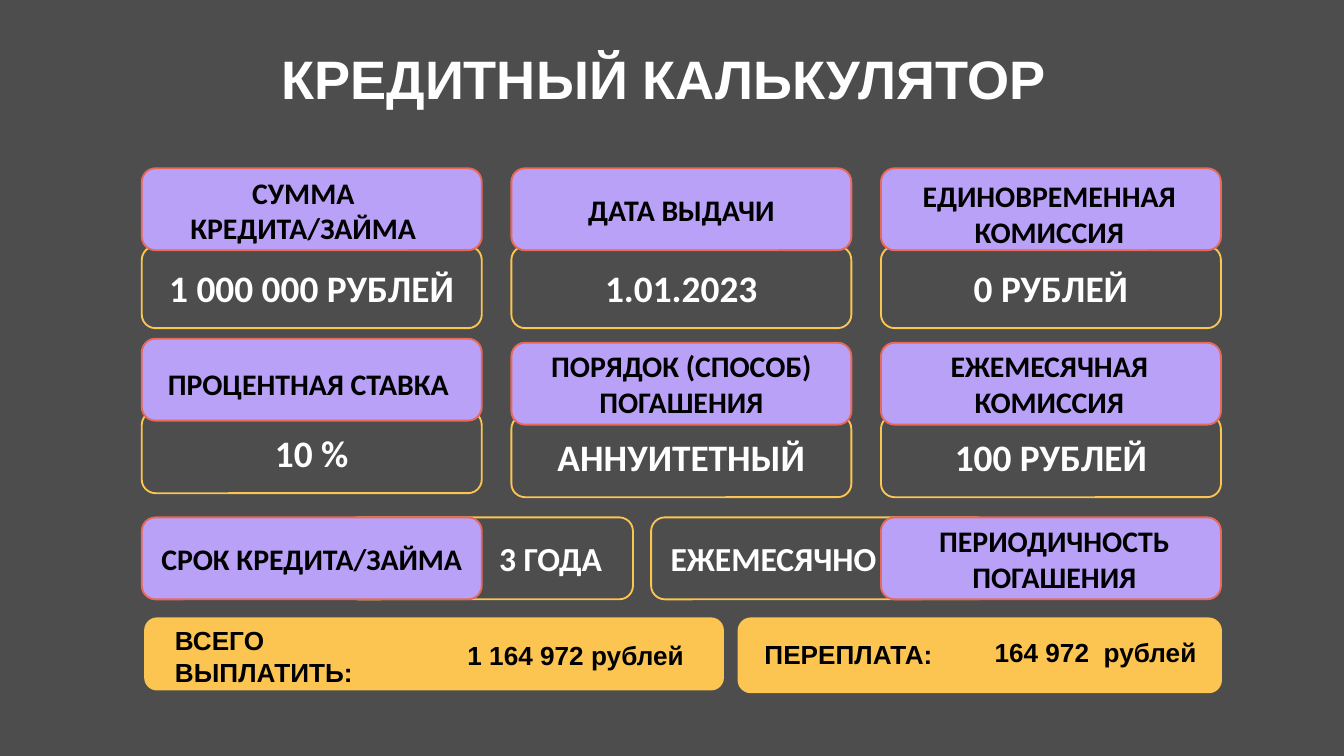
from pptx import Presentation
from pptx.dml.color import RGBColor
from pptx.enum.shapes import MSO_SHAPE
from pptx.enum.text import MSO_ANCHOR, PP_ALIGN
from pptx.util import Inches, Pt

WIDE = Inches(10)
HIGH = WIDE * 9 // 16
COLS = (10.55, 38.05, 65.55)
ROWS = (22.26, 45.33, 68.44)
CELL = (25.3, 10.84)
DROPS = (10.31, 9.6)
LIFT = 0.53
LINE = (0.01, 0.2, 0.98, 0.6)
FULL = (0.01, 0, 0.98, 1)
GOLD, LILAC, CORAL = "FCC450", "BAA1F8", "E86859"
WHITE, BLACK, GREY = "FFFFFF", "000000", "4D4D4D"

VALUES = [
    (0, 0, "1 000 000 РУБЛЕЙ"),
    (1, 0, "1.01.2023"),
    (2, 0, "0 РУБЛЕЙ"),
    (0, 1, "10 %"),
    (1, 1, "АННУИТЕТНЫЙ"),
    (2, 1, "100 РУБЛЕЙ"),
]
TERMS = [
    (25.6, 21.5, "3 ГОДА", (0.14, 0.2, 1.15, 0.6)),
    (48.45, 25.3, "ЕЖЕМЕСЯЧНО", (-0.13, 0.2, 0.98, 0.6)),
]
LABELS = [
    (0, 0, "СУММА КРЕДИТА/ЗАЙМА", (0.1, 0.01, 0.75, 1)),
    (1, 0, "ДАТА ВЫДАЧИ", (0.01, 0.24, 0.98, 0.54)),
    (2, 0, "ЕДИНОВРЕМЕННАЯ КОМИССИЯ", (0.09, 0.05, 0.81, 1)),
    (0, 1, "ПРОЦЕНТНАЯ СТАВКА", (0, 0.28, 0.98, 0.54)),
    (1, 1, "ПОРЯДОК (СПОСОБ) ПОГАШЕНИЯ", FULL),
    (2, 1, "ЕЖЕМЕСЯЧНАЯ КОМИССИЯ", (0.15, 0, 0.69, 1)),
    (0, 2, "СРОК КРЕДИТА/ЗАЙМА", (0.01, 0.23, 0.98, 0.54)),
    (2, 2, "ПЕРИОДИЧНОСТЬ ПОГАШЕНИЯ", (0.13, 0, 0.76, 1)),
]
TOTALS = [
    ((10.8, 81.8, 43, 9.42),
     "ВСЕГО ВЫПЛАТИТЬ:", (0.04, 0.21, 0.48, 0.64),
     "1 164 972 рублей", (0.47, 0.02, 0.55, 1)),
    ((54.95, 81.8, 35.9, 9.78),
     "ПЕРЕПЛАТА:", (0.04, 0.22, 0.44, 0.53),
     "164 972  рублей", (0.48, 0.15, 0.52, 0.62)),
]


def paint(code):
    return RGBColor.from_string(code)


def place(box):
    x, y, w, h = box
    return [round(part * full / 100) for part, full in
            ((x, WIDE), (y, HIGH), (w, WIDE), (h, HIGH))]


def inside(box, spot):
    x, y, w, h = box
    return x + spot[0] * w, y + spot[1] * h, spot[2] * w, spot[3] * h


def write(shape, text, size, ink, face, align=PP_ALIGN.CENTER,
          anchor=MSO_ANCHOR.MIDDLE):
    frame = shape.text_frame
    frame.text = text
    frame.word_wrap = True
    frame.vertical_anchor = anchor
    frame.margin_left = frame.margin_right = Inches(0.05)
    frame.margin_top = frame.margin_bottom = Inches(0.05)
    para = frame.paragraphs[0]
    para.alignment = align
    font = para.runs[0].font
    font.size, font.name, font.bold = Pt(size), face, True
    font.color.rgb = paint(ink)


def label(slide, box, *style):
    write(slide.shapes.add_textbox(*place(box)), *style)


def panel(slide, box, edge, fill=None):
    shape = slide.shapes.add_shape(MSO_SHAPE.ROUNDED_RECTANGLE, *place(box))
    shape.shadow.inherit = False
    shape.line.color.rgb = paint(edge)
    shape.line.width = Pt(1)
    if fill:
        shape.fill.solid()
        shape.fill.fore_color.rgb = paint(fill)
    else:
        shape.fill.background()


def value(slide, box, text, size, spot=LINE):
    panel(slide, box, GOLD)
    label(slide, inside(box, spot), text, size, WHITE, "Calibri")


def head(slide, box, text, spot):
    panel(slide, box, CORAL, LILAC)
    label(slide, inside(box, spot), text, 16, BLACK, "Calibri")


def total(slide, box, name, left, cost, right):
    panel(slide, box, GOLD, GOLD)
    label(slide, inside(box, left), name, 14, BLACK, "Arial", PP_ALIGN.LEFT)
    label(slide, inside(box, right), cost, 14, BLACK, "Arial")


def cell(col, row):
    lift = LIFT if (col, row) == (0, 1) else 0
    return COLS[col], ROWS[row] - lift, *CELL


def title(slide, box, text):
    shape = slide.shapes.title
    shape.left, shape.top, shape.width, shape.height = place(box)
    write(shape, text, 29, WHITE, "Arial", anchor=MSO_ANCHOR.TOP)


def main():
    deck = Presentation()
    deck.slide_width, deck.slide_height = WIDE, HIGH
    slide = deck.slides.add_slide(deck.slide_layouts[5])
    slide.background.fill.solid()
    slide.background.fill.fore_color.rgb = paint(GREY)
    title(slide, (9.1, 5.16, 80.6, 10.49), "КРЕДИТНЫЙ КАЛЬКУЛЯТОР")
    for col, row, text in VALUES:
        x, y, w, h = cell(col, row)
        value(slide, (x, y + DROPS[row], w, h), text, 20)
    for x, w, text, spot in TERMS:
        value(slide, (x, ROWS[2], w, CELL[1]), text, 18, spot)
    for col, row, text, spot in LABELS:
        head(slide, cell(col, row), text, spot)
    for row in TOTALS:
        total(slide, *row)
    deck.save("out.pptx")


if __name__ == "__main__":
    main()
